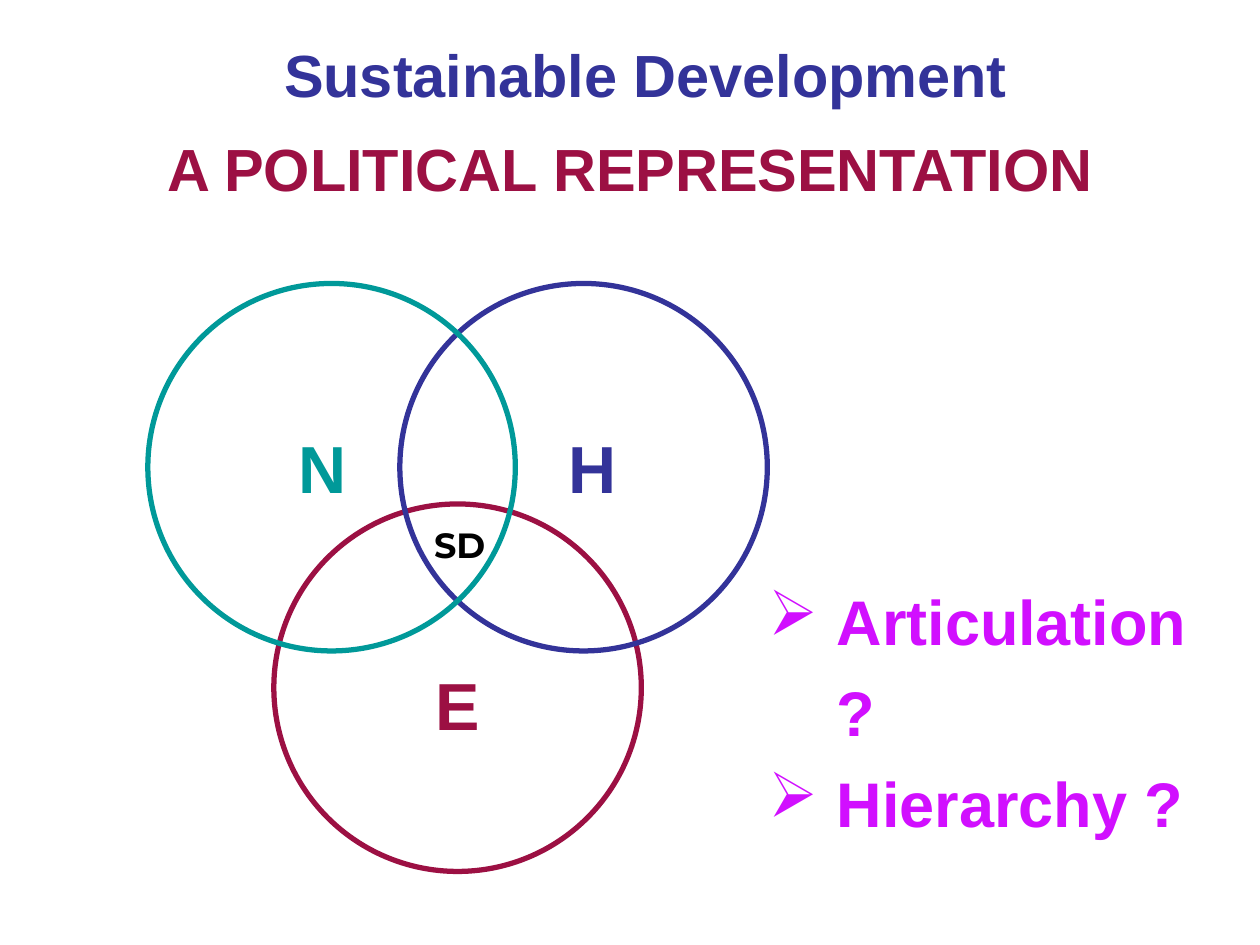
import lxml.etree
import pptx
import pptx.dml.color
import pptx.enum.shapes
import pptx.enum.text
import pptx.oxml.ns
import pptx.util

Pt = pptx.util.Pt
ALIGN = pptx.enum.text.PP_ALIGN
ANCHOR = pptx.enum.text.MSO_ANCHOR

THEME = {
    "font": "Arial", "accent_font": "Montserrat",
    "nature": "009999", "human": "333399", "economy": "9C1043",
    "question": "D10FFF", "black": "000000",
    "title_size": 34, "letter_size": 38, "question_size": 36, "centre_size": 20,
    "circle_line": 3,
}

# text, colour, (left, top, width, height)
TITLES = [
    ("Sustainable Development", "human", (126, 18, 486, 48)),
    ("A POLITICAL REPRESENTATION", "economy", (76.5, 72, 567, 48)),
]

# letter, colour, (left, top), extra insets that move the letter off centre
CIRCLE_SIZE = 210
CIRCLES = [
    ("E", "economy", (156.5, 288), {"margin_top": 19}),
    ("H", "human", (228.5, 162), {"margin_left": 10.6}),
    ("N", "nature", (84.5, 162), {"margin_right": 10.6}),
]

CENTRE = ("SD", (241, 295.5, 45, 31))

QUESTIONS = ["Articulation ?", "Hierarchy ?"]
QUESTION_BOX = (432, 321, 285, 111)
QUESTION_INDENT = 39
BULLET = "➢"


def colour(name):
    return pptx.dml.color.RGBColor.from_string(THEME[name])


def style(paragraph, size, colour_name, font="font", alignment=ALIGN.LEFT):
    paragraph.alignment = alignment
    for run in paragraph.runs:
        run.font.name = THEME[font]
        run.font.size = Pt(THEME[size])
        run.font.bold = True
        run.font.color.rgb = colour(colour_name)


def add_text(slide, text, box, wrap=True):
    text_frame = slide.shapes.add_textbox(*map(Pt, box)).text_frame
    text_frame.word_wrap = wrap
    text_frame.text = text
    return text_frame


def add_circle(slide, letter, colour_name, corner, insets):
    circle = slide.shapes.add_shape(
        pptx.enum.shapes.MSO_SHAPE.OVAL,
        *map(Pt, corner), Pt(CIRCLE_SIZE), Pt(CIRCLE_SIZE))
    circle.shadow.inherit = False
    circle.fill.background()
    circle.line.color.rgb = colour(colour_name)
    circle.line.width = Pt(THEME["circle_line"])
    text_frame = circle.text_frame
    text_frame.vertical_anchor = ANCHOR.MIDDLE
    for side in ("left", "top", "right", "bottom"):
        margin = f"margin_{side}"
        setattr(text_frame, margin, Pt(insets.get(margin, 0)))
    text_frame.text = letter
    style(text_frame.paragraphs[0], "letter_size", colour_name, alignment=ALIGN.CENTER)


def add_bullet(paragraph):
    properties = paragraph._p.get_or_add_pPr()
    properties.set("marL", str(Pt(QUESTION_INDENT)))
    properties.set("indent", str(-Pt(QUESTION_INDENT)))
    bullet = lxml.etree.SubElement(properties, pptx.oxml.ns.qn("a:buChar"))
    bullet.set("char", BULLET)


def main():
    presentation = pptx.Presentation()
    presentation.slide_width, presentation.slide_height = Pt(720), Pt(540)
    slide = presentation.slides.add_slide(presentation.slide_layouts[6])

    for circle in CIRCLES:
        add_circle(slide, *circle)

    for text, colour_name, box in TITLES:
        title = add_text(slide, text, box)
        style(title.paragraphs[0], "title_size", colour_name, alignment=ALIGN.CENTER)

    questions = add_text(slide, "\n".join(QUESTIONS), QUESTION_BOX, wrap=False)
    for paragraph in questions.paragraphs:
        style(paragraph, "question_size", "question")
        paragraph.line_spacing = 1.2
        add_bullet(paragraph)

    centre = add_text(slide, *CENTRE, wrap=False)
    style(centre.paragraphs[0], "centre_size", "black", font="accent_font")

    presentation.save("out.pptx")


if __name__ == "__main__":
    main()
